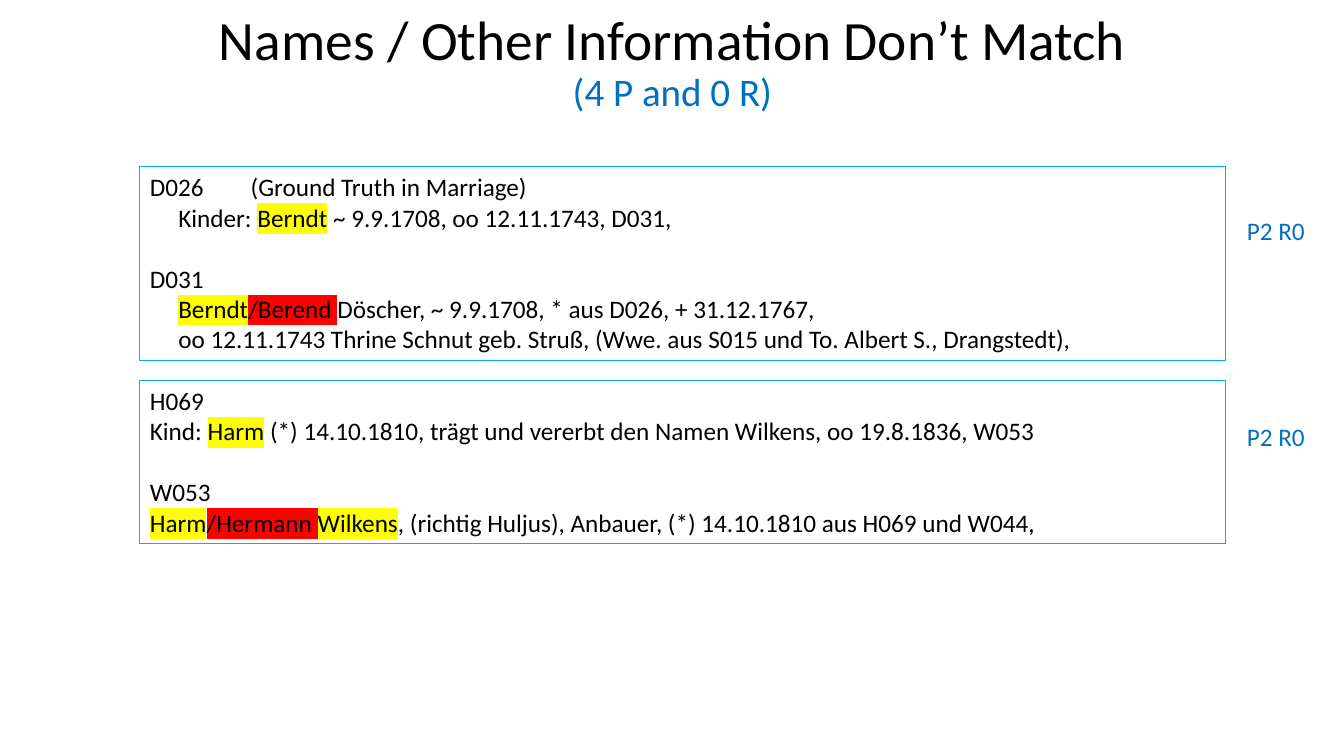
from lxml import etree
from pptx import Presentation
from pptx.dml.color import RGBColor
from pptx.enum.shapes import MSO_SHAPE
from pptx.enum.text import MSO_ANCHOR, PP_ALIGN
from pptx.oxml.ns import qn
from pptx.util import Pt

RECT = MSO_SHAPE.RECTANGLE
TOP, MIDDLE = MSO_ANCHOR.TOP, MSO_ANCHOR.MIDDLE
LEFT, CENTER = PP_ALIGN.LEFT, PP_ALIGN.CENTER
BLACK, BLUE, CYAN = "000000", "0070C0", "00B0F0"
YELLOW, RED = "FFFF00", "FF0000"
INDENT, GAP = 20.3, 22


def color(code):
    return RGBColor.from_string(code)


def write(frame, text, size=18, ink=BLACK, mark=None, para=None,
          align=LEFT, indent=0, before=0, spacing=None):
    if para is None:
        para = frame.paragraphs[0]
        if para.runs:
            para = frame.add_paragraph()
        para.alignment = align
        para.space_before = Pt(before)
        para.line_spacing = spacing
        if indent:
            props = para._p.get_or_add_pPr()
            props.set("marL", str(Pt(indent)))
            props.set("indent", "0")
    run = para.add_run()
    run.text = text
    run.font.size = Pt(size)
    run.font.color.rgb = color(ink)
    if mark:
        light = etree.SubElement(run.font._element, qn("a:highlight"))
        etree.SubElement(light, qn("a:srgbClr")).set("val", mark)
    run.font.name = "Calibri"
    return para


deck = Presentation()
deck.slide_width, deck.slide_height = Pt(960), Pt(540)
slide = deck.slides.add_slide(deck.slide_layouts[6])

title = slide.shapes.add_textbox(Pt(13), Pt(13), Pt(934.5), Pt(64.8)).text_frame
title.word_wrap = True
title.vertical_anchor = MIDDLE
write(title, "Names / Other Information Don’t Match", size=39.6,
      align=CENTER, spacing=0.9)
write(title, "(4 P and 0 R)", size=27.9, ink=BLUE, align=CENTER, spacing=0.9)

records = [
    (119.2, 138.5, 150.5, [
        (0, 0, [("D026\t(Ground Truth in Marriage)", None)]),
        (INDENT, 0, [("Kinder: ", None), ("Berndt", YELLOW),
                     (" ~ 9.9.1708, oo 12.11.1743, D031,", None)]),
        (0, GAP, [("D031", None)]),
        (INDENT, 0, [("Berndt", YELLOW), ("/Berend ", RED),
                     ("Döscher, ~ 9.9.1708, * aus D026, + 31.12.1767,", None)]),
        (INDENT, 0, [("oo 12.11.1743 Thrine Schnut geb. Struß, "
                      "(Wwe. aus S015 und To. Albert S., Drangstedt),", None)]),
    ]),
    (271.7, 116.5, 297.5, [
        (0, 0, [("H069", None)]),
        (0, 0, [("Kind: ", None), ("Harm", YELLOW),
                (" (*) 14.10.1810, trägt und vererbt den Namen Wilkens, "
                 "oo 19.8.1836, W053", None)]),
        (0, GAP, [("W053", None)]),
        (0, 0, [("Harm", YELLOW), ("/Hermann ", RED), ("Wilkens", YELLOW),
                (", (richtig Huljus), Anbauer, (*) 14.10.1810 "
                 "aus H069 und W044,", None)]),
    ]),
]

for top, height, score, lines in records:
    box = slide.shapes.add_shape(RECT, Pt(100), Pt(top), Pt(775.5), Pt(height))
    box.shadow.inherit = False
    box.fill.background()
    box.line.color.rgb = color(CYAN)
    box.line.width = Pt(0.75)
    frame = box.text_frame
    frame.word_wrap = True
    frame.vertical_anchor = TOP
    for indent, before, spans in lines:
        para = None
        for text, mark in spans:
            para = write(frame, text, mark=mark, para=para,
                         indent=indent, before=before)

    label = slide.shapes.add_textbox(Pt(883.5), Pt(score), Pt(56.2), Pt(29))
    label.text_frame.word_wrap = False
    write(label.text_frame, "P2 R0", ink=BLUE)

deck.save("out.pptx")
